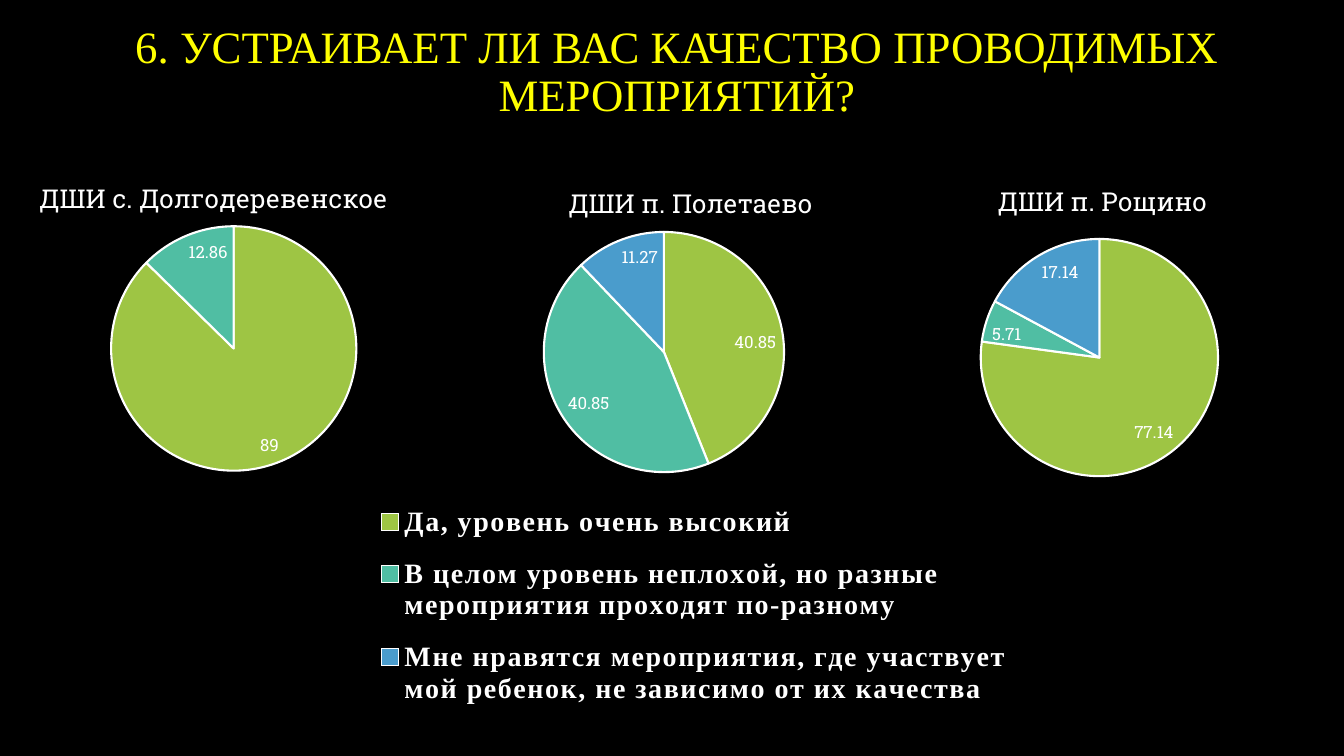
from lxml import etree
from pptx import Presentation
from pptx.chart.data import CategoryChartData
from pptx.dml.color import RGBColor
from pptx.enum.chart import XL_CHART_TYPE as ChartType
from pptx.enum.chart import XL_LABEL_POSITION as LabelPosition
from pptx.enum.chart import XL_LEGEND_POSITION as LegendPosition
from pptx.enum.text import MSO_ANCHOR, PP_ALIGN
from pptx.oxml.ns import qn
from pptx.util import Inches, Pt

# Content
HEADING = "6. УСТРАИВАЕТ ЛИ ВАС КАЧЕСТВО ПРОВОДИМЫХ МЕРОПРИЯТИЙ?"
ANSWERS = [
    "Да, уровень очень высокий",
    "В целом уровень неплохой, но разные мероприятия проходят по-разному",
    "Мне нравятся мероприятия, где участвует мой ребенок, не зависимо от их качества",
]
NUMBERS = ["1", "2", "3"]
# Boxes are in inches; title, plot and legend places are fractions of the chart
SCHOOLS = [
    {"name": "ДШИ с. Долгодеревенское", "categories": NUMBERS,
     "values": (89, 12.86, 0), "box": (-0.16, 1.6, 4.59, 3.08),
     "title": (0.11, 0.04), "plot": (0.08, 0.21, 0.92, 0.79), "legend": None},
    {"name": "ДШИ п. Полетаево", "categories": ANSWERS,
     "values": (40.85, 40.85, 11.27), "box": (3.54, 1.6, 6.62, 5.65),
     "title": (0.31, 0.03), "plot": (0.28, 0.11, 0.36, 0.45),
     "legend": (0.03, 0.57, 0.95, 0.42)},
    {"name": "ДШИ п. Рощино", "categories": NUMBERS,
     "values": (77.14, 5.71, 17.14), "box": (8.86, 1.62, 4.13, 3.24),
     "title": (0.24, 0.04), "plot": (0.21, 0.23, 0.57, 0.73), "legend": None},
]
SLICE_COLOURS = ["9EC544", "50BEA3", "4A9CCC"]
BLACK, WHITE, YELLOW = "000000", "FFFFFF", "FFFF00"
SLAB, SERIF = "Roboto Slab", "Times New Roman"


def paint(fill, colour):
    fill.solid()
    fill.fore_color.rgb = RGBColor.from_string(colour)


def set_font(font, name, size, colour, bold=False):
    font.name, font.size, font.bold = name, Pt(size), bold
    paint(font.fill, colour)


def place(chart, part, numbers, after=None):
    """Give a chart part a fixed place, in fractions of the chart."""
    parent = chart.element.find(".//" + qn(part))
    for old in parent.findall(qn("c:layout")):
        parent.remove(old)
    layout = etree.Element(qn("c:layout"))
    manual = etree.SubElement(layout, qn("c:manualLayout"))
    settings = [("xMode", "edge"), ("yMode", "edge"), *zip("xywh", numbers)]
    if part == "c:plotArea":
        settings.insert(0, ("layoutTarget", "inner"))
    for tag, value in settings:
        etree.SubElement(manual, qn("c:" + tag)).set("val", str(value))
    index = parent.index(parent.find(qn(after))) + 1 if after else 0
    parent.insert(index, layout)


def add_heading(slide):
    box = slide.shapes.add_textbox(Inches(0.44), Inches(0.16), Inches(12.55), Inches(1.13))
    frame = box.text_frame
    frame.word_wrap = True
    frame.vertical_anchor = MSO_ANCHOR.MIDDLE
    paragraph = frame.paragraphs[0]
    paragraph.alignment = PP_ALIGN.CENTER
    paragraph.line_spacing = 0.9
    run = paragraph.add_run()
    run.text = HEADING
    set_font(run.font, SERIF, 32, YELLOW)


def add_pie(slide, school):
    data = CategoryChartData()
    data.categories = school["categories"]
    data.add_series("Series 1", school["values"])
    box = [Inches(number) for number in school["box"]]
    chart = slide.shapes.add_chart(ChartType.PIE, *box, data).chart
    set_font(chart.font, SLAB, 10, WHITE)

    # Title
    chart.has_title = True
    run = chart.chart_title.text_frame.paragraphs[0].add_run()
    run.text = school["name"]
    set_font(run.font, SLAB, 18.6, WHITE)
    chart.chart_title.include_in_layout = False
    place(chart, "c:title", school["title"], after="c:tx")

    # Slices
    plot = chart.plots[0]
    plot.vary_by_categories = True
    for index, colour in enumerate(SLICE_COLOURS):
        look = plot.series[0].points[index].format
        paint(look.fill, colour)
        paint(look.line.fill, WHITE)
        look.line.width = Pt(1.5)
    place(chart, "c:plotArea", school["plot"])

    # Values, with zero left blank
    labels = plot.series[0].data_labels
    labels.show_value = True
    labels.position = LabelPosition.INSIDE_END
    labels.number_format = "General;;"
    labels.number_format_is_linked = False
    set_font(labels.font, SLAB, 12, WHITE)

    # Legend, with letters one point apart
    chart.has_legend = school["legend"] is not None
    if chart.has_legend:
        chart.legend.position = LegendPosition.BOTTOM
        chart.legend.include_in_layout = False
        set_font(chart.legend.font, SERIF, 20, WHITE, bold=True)
        for properties in chart.element.xpath(".//c:legend//a:defRPr"):
            properties.set("spc", "100")
        place(chart, "c:legend", school["legend"], after="c:legendPos")


def main():
    presentation = Presentation()
    presentation.slide_width = Inches(13.33)
    presentation.slide_height = Inches(7.5)
    slide = presentation.slides.add_slide(presentation.slide_layouts[6])
    paint(slide.background.fill, BLACK)
    add_heading(slide)
    for school in SCHOOLS:
        add_pie(slide, school)
    presentation.save("out.pptx")


if __name__ == "__main__":
    main()
